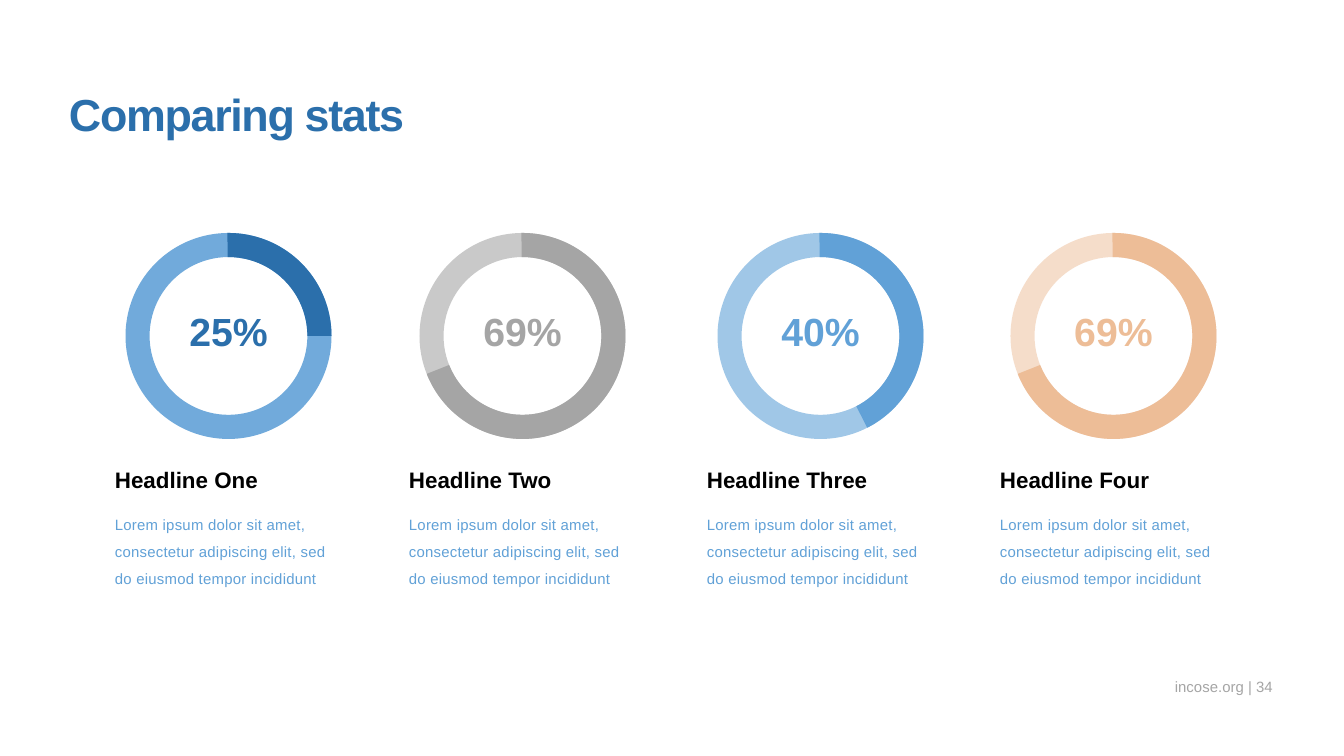
"""Build a slide that compares four ring statistics."""
from dataclasses import dataclass
from lxml.etree import SubElement
from pptx import Presentation
from pptx.dml.color import RGBColor
from pptx.enum.shapes import MSO_SHAPE as Shape
from pptx.enum.text import MSO_ANCHOR as Anchor, MSO_AUTO_SIZE as Fit, PP_ALIGN as Align
from pptx.oxml.ns import qn
from pptx.util import Pt


@dataclass(frozen=True)
class Theme:
    face: str = "Arial"
    navy: str = "2B6FAB"
    sky: str = "61A1D7"
    gray: str = "A5A5A5"
    peach: str = "EDBD97"
    ink: str = "000000"
    title: int = 24
    stat: int = 21
    head: int = 12
    small: int = 8


T = Theme()
TITLE = "Comparing stats"
FOOTER = "incose.org | 34"
BODY = "Lorem ipsum dolor sit amet, consectetur adipiscing elit, sed do eiusmod tempor incididunt"
# left, headline, label, swept percent, arc color, track color, track opacity
STATS = [
    (115, "Headline One", "25%", 25, T.navy, "71AADB", 100),
    (409, "Headline Two", "69%", 69, T.gray, "C9C9C9", 100),
    (707, "Headline Three", "40%", 42.5, T.sky, "A0C7E7", 100),
    (1000, "Headline Four", "69%", 69, T.peach, T.peach, 50),
]
COL, RING, BAND = 227, 206, 0.117
RING_TOP, STAT_TOP, HEAD_TOP, BODY_TOP = 233, 301, 469, 507
STAT_W, STAT_H = 106, 60
DEGREE = 0.6


def px(*sizes):
    return [round(size * 914400 / 134.4) for size in sizes]


def write(shape, text, size, color, bold=False, align=Align.LEFT,
          line=None, track=0, anchor=Anchor.TOP):
    frame = shape.text_frame
    frame.margin_left = frame.margin_right = frame.margin_top = frame.margin_bottom = 0
    frame.word_wrap, frame.auto_size = True, Fit.NONE
    frame.vertical_anchor = anchor
    para = frame.paragraphs[0]
    run = para.add_run()
    run.text = text
    if track:
        run._r.get_or_add_rPr().set("spc", str(track))
    para.alignment = align
    if line:
        para.line_spacing = line
    font = para.font
    font.name, font.size, font.bold = T.face, Pt(size), bold
    font.color.rgb = RGBColor.from_string(color)


def paint(shape, color, alpha=100):
    shape.shadow.inherit = False
    shape.line.fill.background()
    shape.fill.solid()
    shape.fill.fore_color.rgb = RGBColor.from_string(color)
    if alpha < 100:
        tint = shape._element.spPr.find(".//" + qn("a:srgbClr"))
        SubElement(tint, qn("a:alpha"), val=str(alpha * 1000))


def ring(slide, left, share, color, pale, alpha):
    group = slide.shapes.add_group_shape()
    area = px(left, RING_TOP, RING, RING)
    track = group.shapes.add_shape(Shape.DONUT, *area)
    track.adjustments[0] = BAND
    paint(track, pale, alpha)
    arc = group.shapes.add_shape(Shape.BLOCK_ARC, *area)
    end = (share * 3.6 - 90) % 360
    for i, value in enumerate((269.4 * DEGREE, end * DEGREE, BAND)):
        arc.adjustments[i] = value
    paint(arc, color)


def box(slide, left, top, width, height):
    return slide.shapes.add_textbox(*px(left, top, width, height))


def main():
    deck = Presentation()
    deck.slide_width, deck.slide_height = px(1344, 756)
    slide = deck.slides.add_slide(deck.slide_layouts[5])
    title = slide.shapes.title
    title.left, title.top, title.width, title.height = px(69, 87, 1208, 54)
    write(title, TITLE, T.title, T.navy, bold=True, track=-70)
    for left, head, label, share, color, pale, alpha in STATS:
        edge = left + (COL - RING) / 2
        ring(slide, edge, share, color, pale, alpha)
        mid = edge + (RING - STAT_W) / 2
        write(box(slide, mid, STAT_TOP, STAT_W, STAT_H), label, T.stat, color,
              bold=True, align=Align.CENTER, anchor=Anchor.MIDDLE)
        write(box(slide, left, HEAD_TOP, COL, 40), head, T.head, T.ink, bold=True, line=0.9)
        write(box(slide, left, BODY_TOP, COL, 95), BODY, T.small, T.sky, line=1.5, track=10)
    write(box(slide, 1121, 671, 152, 25), FOOTER, T.small, T.gray,
          align=Align.RIGHT, line=1.5, anchor=Anchor.BOTTOM)
    deck.save("out.pptx")


if __name__ == "__main__":
    main()
